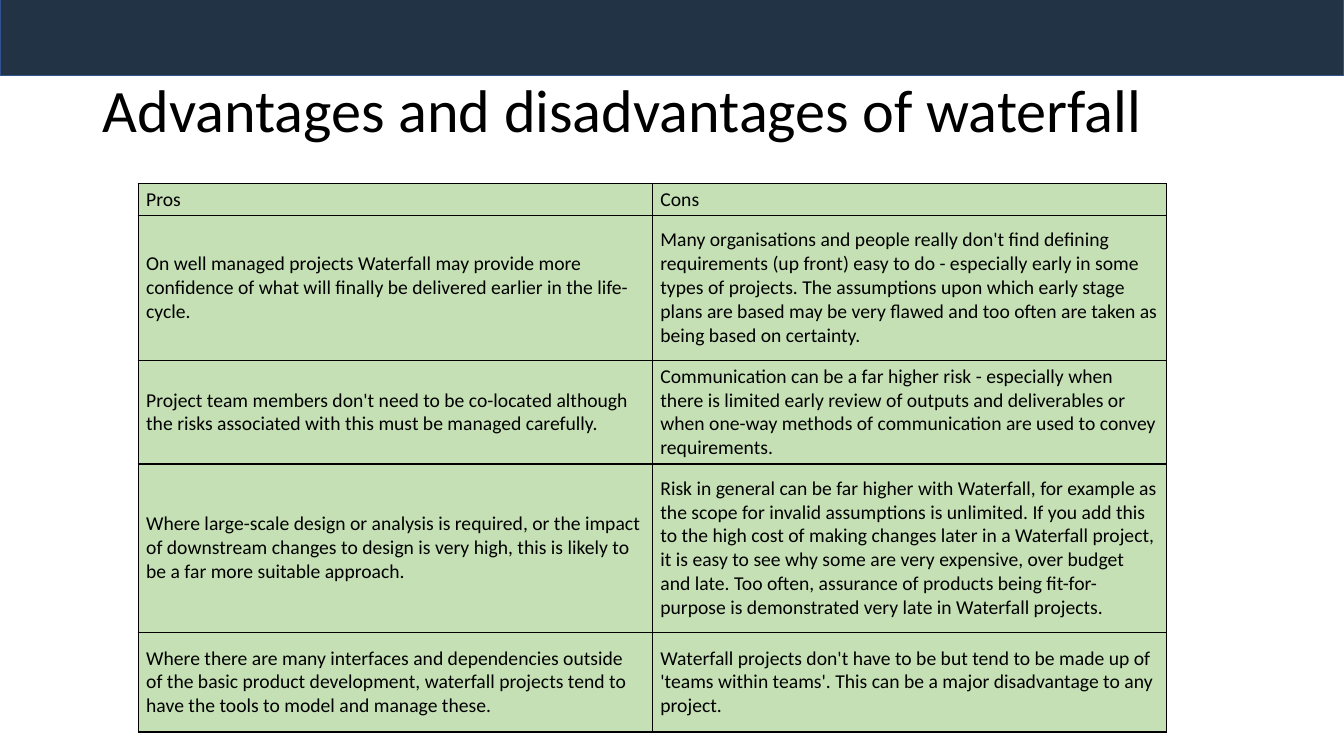
import pptx
import pptx.dml.color
import pptx.enum.shapes
import pptx.enum.text
import pptx.oxml
import pptx.oxml.ns
import pptx.util
from pptx.util import Inches

COLOURS = {
    "text": "000000",
    "banner": "223346",
    "banner edge": "325491",
    "cell": "C5E0B4",
    "grid": "000000",
}

PROS_AND_CONS = [
    ("Pros", "Cons"),
    (
        "On well managed projects Waterfall may provide more confidence of what "
        "will finally be delivered earlier in the life-cycle.",
        "Many organisations and people really don't find defining requirements "
        "(up front) easy to do - especially early in some types of projects. The "
        "assumptions upon which early stage plans are based may be very flawed "
        "and too often are taken as being based on certainty.",
    ),
    (
        "Project team members don't need to be co-located although the risks "
        "associated with this must be managed carefully.",
        "Communication can be a far higher risk - especially when there is "
        "limited early review of outputs and deliverables or when one-way "
        "methods of communication are used to convey requirements.",
    ),
    (
        "Where large-scale design or analysis is required, or the impact of "
        "downstream changes to design is very high, this is likely to be a far "
        "more suitable approach.",
        "Risk in general can be far higher with Waterfall, for example as the "
        "scope for invalid assumptions is unlimited. If you add this to the high "
        "cost of making changes later in a Waterfall project, it is easy to see "
        "why some are very expensive, over budget and late. Too often, assurance "
        "of products being fit-for-purpose is demonstrated very late in "
        "Waterfall projects.",
    ),
    (
        "Where there are many interfaces and dependencies outside of the basic "
        "product development, waterfall projects tend to have the tools to model "
        "and manage these.",
        "Waterfall projects don't have to be but tend to be made up of 'teams "
        "within teams'. This can be a major disadvantage to any project.",
    ),
]
ROW_HEIGHTS = [0.3, 1.44, 0.99, 1.67, 0.99]


def colour(name):
    return pptx.dml.color.RGBColor.from_string(COLOURS[name])


class SlideBuilder:
    """Holds the text style and the slide being filled."""

    font_name = "Calibri"
    title_size = 43
    table_size = 14

    def __init__(self, presentation):
        self.slide = presentation.slides.add_slide(presentation.slide_layouts[5])

    def style(self, paragraph, size):
        paragraph.alignment = pptx.enum.text.PP_ALIGN.LEFT
        paragraph.font.name = self.font_name
        paragraph.font.size = pptx.util.Pt(size)
        paragraph.font.color.rgb = colour("text")

    def banner(self, left, top, width, height):
        banner = self.slide.shapes.add_shape(
            pptx.enum.shapes.MSO_SHAPE.RECTANGLE,
            Inches(left), Inches(top), Inches(width), Inches(height))
        banner.shadow.inherit = False
        banner.fill.solid()
        banner.fill.fore_color.rgb = colour("banner")
        banner.line.color.rgb = colour("banner edge")
        banner.line.width = pptx.util.Pt(1)

    def title(self, text, left, top, width, height):
        title = self.slide.shapes.title
        title.left, title.top = Inches(left), Inches(top)
        title.width, title.height = Inches(width), Inches(height)
        frame = title.text_frame
        frame.text = text
        frame.word_wrap = True
        frame.auto_size = pptx.enum.text.MSO_AUTO_SIZE.NONE
        frame.vertical_anchor = pptx.enum.text.MSO_ANCHOR.MIDDLE
        frame.paragraphs[0].line_spacing = 0.9
        self.style(frame.paragraphs[0], self.title_size)

    def table(self, rows, row_heights, left, top, width):
        table = self.slide.shapes.add_table(
            len(rows), len(rows[0]), Inches(left), Inches(top),
            Inches(width), Inches(sum(row_heights))).table
        for row, height, texts in zip(table.rows, row_heights, rows):
            row.height = Inches(height)
            for cell, text in zip(row.cells, texts):
                self.fill_cell(cell, text)

    def fill_cell(self, cell, text):
        cell.text = text
        cell.vertical_anchor = pptx.enum.text.MSO_ANCHOR.MIDDLE
        cell.margin_left = cell.margin_right = Inches(0.08)
        cell.margin_top = cell.margin_bottom = Inches(0.04)
        paragraph = cell.text_frame.paragraphs[0]
        self.style(paragraph, self.table_size)
        paragraph.font.bold = False
        self.border_cell(cell)
        cell.fill.solid()
        cell.fill.fore_color.rgb = colour("cell")

    def border_cell(self, cell):
        """Draw all four edges; they must precede the fill in the cell's XML."""
        properties = cell._tc.get_or_add_tcPr()
        for edge in ("lnL", "lnR", "lnT", "lnB"):
            properties.append(pptx.oxml.parse_xml(
                f'<a:{edge} {pptx.oxml.ns.nsdecls("a")} w="{pptx.util.Pt(1)}">'
                f'<a:solidFill><a:srgbClr val="{COLOURS["grid"]}"/></a:solidFill>'
                f'</a:{edge}>'))


def main():
    presentation = pptx.Presentation()
    presentation.slide_width = Inches(13.33)
    presentation.slide_height = Inches(7.5)
    builder = SlideBuilder(presentation)
    builder.banner(0, -0.03, 13.33, 0.78)
    builder.title("Advantages and disadvantages of waterfall", 0.92, 0.4, 11.5, 1.45)
    builder.table(PROS_AND_CONS, ROW_HEIGHTS, 1.37, 1.82, 10.2)
    presentation.save("out.pptx")


if __name__ == "__main__":
    main()
